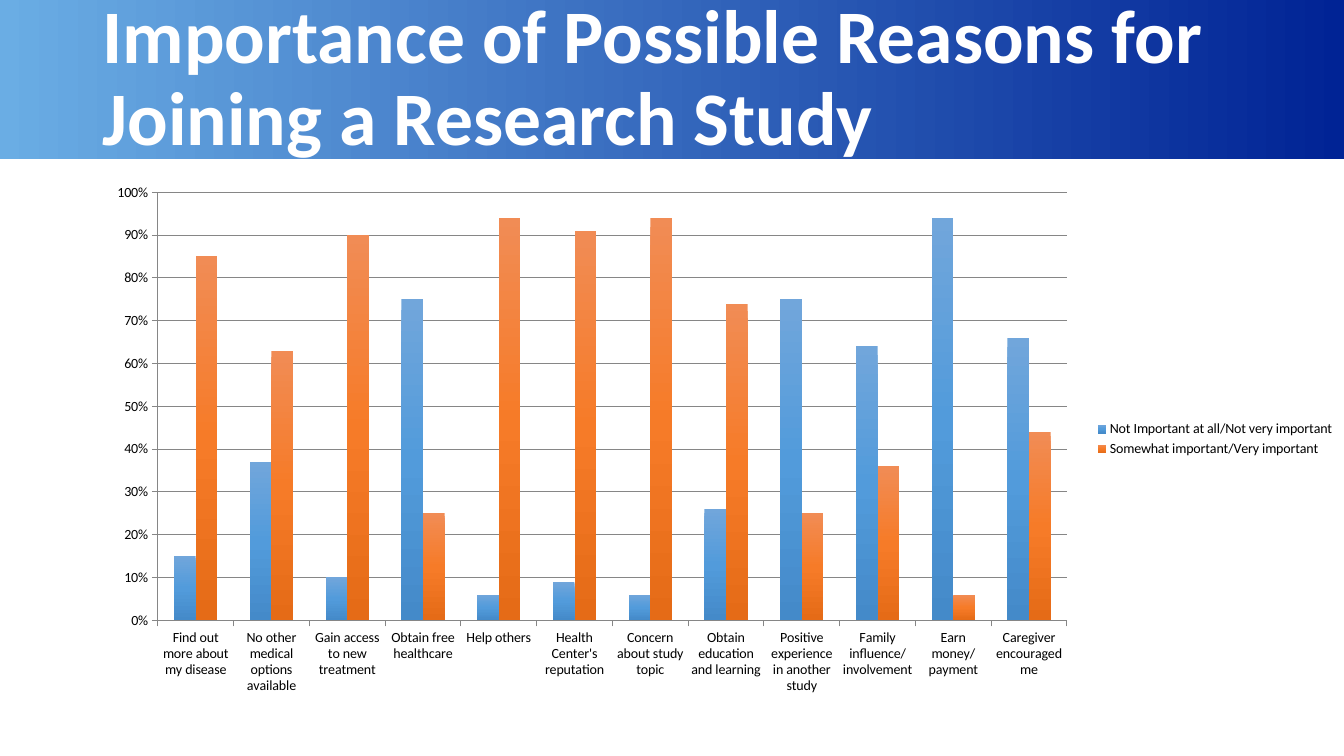
from copy import deepcopy

from lxml.etree import SubElement
from pptx import Presentation
from pptx.chart.data import CategoryChartData
from pptx.dml.color import RGBColor
from pptx.enum.chart import XL_CHART_TYPE, XL_LEGEND_POSITION, XL_TICK_MARK
from pptx.enum.shapes import MSO_SHAPE
from pptx.enum.text import MSO_ANCHOR
from pptx.oxml.ns import qn
from pptx.util import Inches, Pt

FONT = "Calibri"
TITLE = "Importance of Possible Reasons for Joining a Research Study"
REASONS = [
    "Find out more about my disease", "No other medical options available",
    "Gain access to new treatment", "Obtain free healthcare", "Help others",
    "Health Center's reputation", "Concern about study topic",
    "Obtain education and learning", "Positive experience in another study",
    "Family influence/involvement", "Earn money/payment",
    "Caregiver encouraged me",
]
# Name, values, gradient from top to bottom
RATINGS = [
    ("Not Important at all/Not very important",
     [0.15, 0.37, 0.1, 0.75, 0.06, 0.09, 0.06, 0.26, 0.75, 0.64, 0.94, 0.66],
     ["71A6DB", "529BDB", "448AC9"]),
    ("Somewhat important/Very important",
     [0.85, 0.63, 0.9, 0.25, 0.94, 0.91, 0.94, 0.74, 0.25, 0.36, 0.06, 0.44],
     ["F18C55", "F67B28", "E56B17"]),
]


def color(hex_string):
    return RGBColor.from_string(hex_string)


def fill_gradient(fill, element, colors, angle):
    """Spread the colours evenly over a linear gradient."""
    fill.gradient()
    fill.gradient_angle = angle
    stop_list = element.find(".//" + qn("a:gsLst"))
    while len(stop_list) < len(colors):
        stop_list.append(deepcopy(stop_list[0]))
    for index, stop in enumerate(fill.gradient_stops):
        stop.position = index / (len(colors) - 1)
        stop.color.rgb = color(colors[index])


def add_banner(page, left, top, width, height):
    # Gradient band
    band = page.shapes.add_shape(MSO_SHAPE.RECTANGLE, Inches(left), Inches(top),
                                 Inches(width), Inches(height))
    band.shadow.inherit = False
    band.line.fill.background()
    fill_gradient(band.fill, band._element, ["6AADE4", "002395"], 0)

    # Title
    box = page.shapes.add_textbox(Inches(left + 0.92), Inches(top + 0.07),
                                  Inches(11.5), Inches(1.45))
    frame = box.text_frame
    frame.word_wrap = True
    frame.vertical_anchor = MSO_ANCHOR.MIDDLE
    frame.text = TITLE
    para = frame.paragraphs[0]
    para.line_spacing = 0.9
    font = para.runs[0].font
    font.name, font.size, font.bold = FONT, Pt(54), True
    font.color.rgb = color("FFFFFF")


def place_plot(chart, **place):
    """Fix the inner plot area as fractions of the chart."""
    plot_area = chart._chartSpace.find(".//" + qn("c:plotArea"))
    layout = plot_area.find(qn("c:layout"))
    if layout is None:
        layout = SubElement(plot_area, qn("c:layout"))
        plot_area.insert(0, layout)
    manual = SubElement(layout, qn("c:manualLayout"))
    settings = {"layoutTarget": "inner", "xMode": "edge", "yMode": "edge", **place}
    for tag, value in settings.items():
        SubElement(manual, qn("c:" + tag)).set("val", str(value))


def add_reasons_chart(page, left, top, width, height):
    chart_data = CategoryChartData(number_format="0%")
    chart_data.categories = REASONS
    for name, values, _ in RATINGS:
        chart_data.add_series(name, values)
    chart = page.shapes.add_chart(
        XL_CHART_TYPE.COLUMN_CLUSTERED, Inches(left), Inches(top),
        Inches(width), Inches(height), chart_data).chart
    chart.has_title = False
    chart.font.name, chart.font.size = FONT, Pt(10)
    chart.font.color.rgb = color("000000")
    place_plot(chart, x=0.052, y=0.034, w=0.726, h=0.809)

    # Columns
    plot = chart.plots[0]
    plot.gap_width, plot.overlap = 150, 0
    plot.vary_by_categories = False
    for series, (_, _, colors) in zip(plot.series, RATINGS):
        fill_gradient(series.format.fill, series._element, colors, 270)

    # Axes
    value_axis = chart.value_axis
    value_axis.minimum_scale, value_axis.maximum_scale = 0, 1
    value_axis.major_unit = 0.1
    value_axis.has_major_gridlines = True
    value_axis.tick_labels.number_format = "0%"
    value_axis.tick_labels.number_format_is_linked = False
    for axis in (value_axis, chart.category_axis):
        axis.major_tick_mark = XL_TICK_MARK.OUTSIDE
        axis.format.line.color.rgb = color("868686")
    value_axis.major_gridlines.format.line.color.rgb = color("868686")

    # Legend
    chart.has_legend = True
    chart.legend.position = XL_LEGEND_POSITION.RIGHT
    chart.legend.include_in_layout = False


def main():
    deck = Presentation()
    deck.slide_width, deck.slide_height = Inches(13.33), Inches(7.5)
    page = deck.slides.add_slide(deck.slide_layouts[6])
    add_banner(page, 0, 0, 13.33, 1.58)
    add_reasons_chart(page, 0.92, 1.73, 12.42, 5.25)
    deck.save("out.pptx")


if __name__ == "__main__":
    main()
